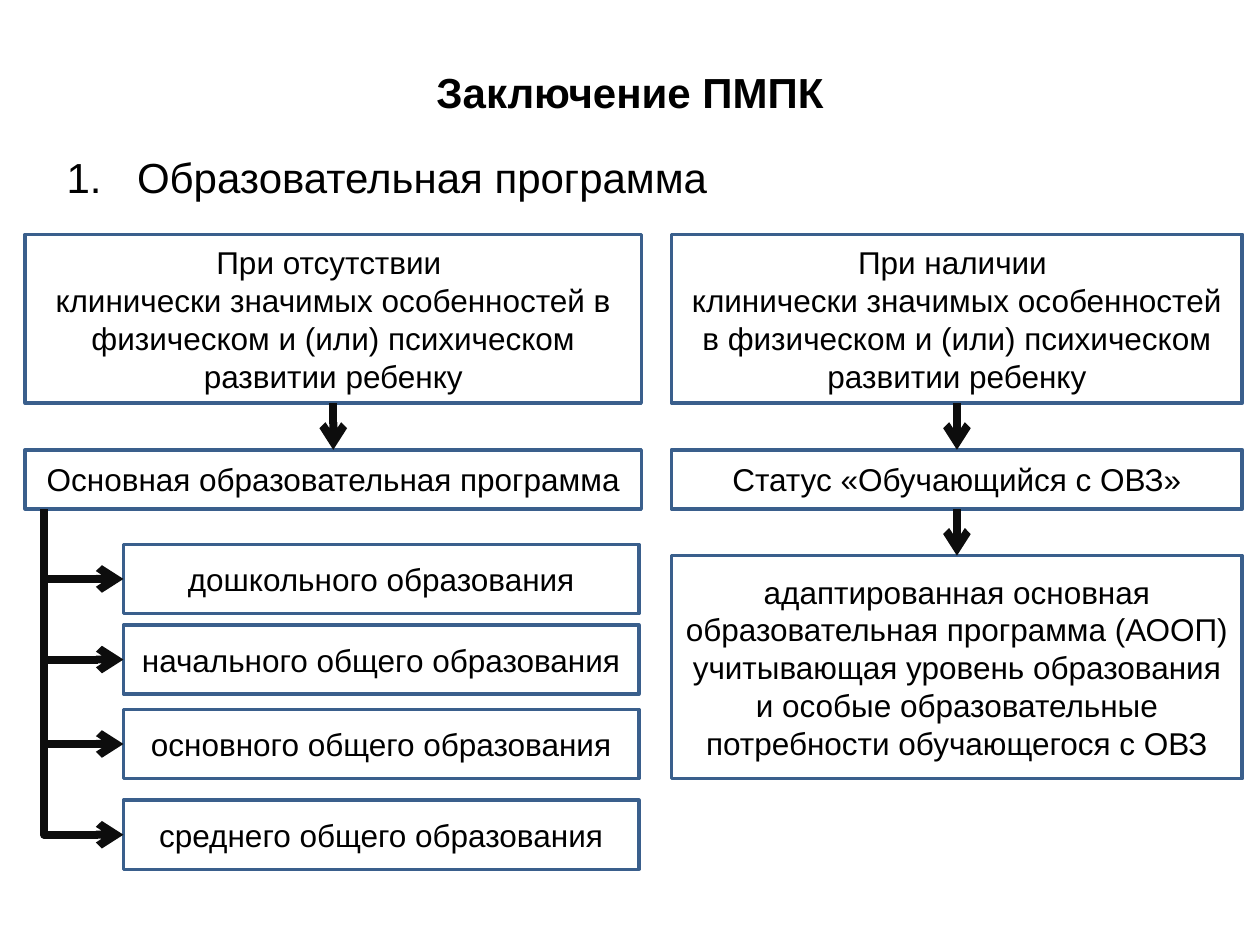
from lxml.etree import SubElement
from pptx import Presentation
from pptx.dml.color import RGBColor
from pptx.enum.shapes import MSO_CONNECTOR, MSO_SHAPE
from pptx.enum.text import MSO_ANCHOR, PP_ALIGN
from pptx.oxml.ns import qn
from pptx.util import Pt

PX = 9144  # EMU per px, 100 px to the inch
BLACK = RGBColor(0x00, 0x00, 0x00)
WHITE = RGBColor(0xFF, 0xFF, 0xFF)
BORDER = RGBColor(0x3A, 0x5F, 0x8C)
ARROW = RGBColor(0x0D, 0x0D, 0x0D)
TOP, LEFT, BOTTOM = 0, 1, 2

CONDITION = ("клинически значимых особенностей в физическом и (или) "
             "психическом развитии ребенку")
LEVELS = [
    (432, "дошкольного образования"),
    (496, "начального общего образования"),
    (563, "основного общего образования"),
    (635, "среднего общего образования"),
]


def emu(*lengths):
    return [round(length * PX) for length in lengths]


def write(frame, *lines, size=18, bold=False, align=PP_ALIGN.CENTER,
          anchor=MSO_ANCHOR.MIDDLE):
    frame.word_wrap = True
    frame.vertical_anchor = anchor
    for number, line in enumerate(lines):
        paragraph = frame.add_paragraph() if number else frame.paragraphs[0]
        paragraph.alignment = align
        run = paragraph.add_run()
        run.text = line
        run.font.name = "Arial"
        run.font.size = Pt(size)
        run.font.bold = bold
        run.font.color.rgb = BLACK


def number_paragraph(paragraph, indent):
    """Give the paragraph a hanging automatic number."""
    properties = paragraph._p.get_or_add_pPr()
    properties.set("marL", str(indent * PX))
    properties.set("indent", str(-indent * PX))
    paragraph.space_before = Pt(5)
    SubElement(properties, qn("a:buAutoNum"), type="arabicPeriod")


def add_box(slide, left, top, width, height, *lines):
    box = slide.shapes.add_shape(MSO_SHAPE.RECTANGLE,
                                 *emu(left, top, width, height))
    box.shadow.inherit = False
    box.fill.solid()
    box.fill.fore_color.rgb = WHITE
    box.line.color.rgb = BORDER
    box.line.width = Pt(2)
    write(box.text_frame, *lines)
    return box


def add_arrow(slide, start, end, kind=MSO_CONNECTOR.STRAIGHT):
    arrow = slide.shapes.add_connector(kind, *emu(*start, *end))
    arrow.line.color.rgb = ARROW
    arrow.line.width = Pt(4.5)
    SubElement(arrow.line._get_or_add_ln(), qn("a:tailEnd"), type="arrow")
    SubElement(arrow._element.spPr, qn("a:effectLst"))
    return arrow


def join_down(slide, upper, lower):
    arrow = add_arrow(slide, (0, 0), (0, 0))
    arrow.begin_connect(upper, BOTTOM)
    arrow.end_connect(lower, TOP)


def add_trunk(slide, x, top, end_x, end_y):
    """Draw an arrow that goes down from (x, top), then right to the end."""
    center_x, center_y = (x + end_x) / 2, (top + end_y) / 2
    half_drop, half_reach = (end_y - top) / 2, (end_x - x) / 2
    # A quarter turn of the mirrored elbow makes its first leg vertical.
    trunk = add_arrow(slide,
                      (center_x + half_drop, center_y - half_reach),
                      (center_x - half_drop, center_y + half_reach),
                      MSO_CONNECTOR.ELBOW)
    properties = trunk._element.spPr
    properties.find(qn("a:prstGeom")).set("prst", "bentConnector2")
    properties.find(qn("a:xfrm")).set("rot", "16200000")


def add_heading(slide, left, top, width):
    title = slide.shapes.add_textbox(*emu(left, top, width, 85))
    write(title.text_frame, "Заключение ПМПК", size=24, bold=True)
    topic = slide.shapes.add_textbox(*emu(left - 7, top + 85, width, 74))
    write(topic.text_frame, "Образовательная программа", size=24,
          align=PP_ALIGN.LEFT, anchor=MSO_ANCHOR.TOP)
    number_paragraph(topic.text_frame.paragraphs[0], 56)


def add_branch_head(slide, left, top, width, condition, outcome):
    """Place a condition and the outcome below it; return the outcome."""
    condition_box = add_box(slide, left, top, width, 134, condition, CONDITION)
    outcome_box = add_box(slide, left, top + 171, width, 47, outcome)
    join_down(slide, condition_box, outcome_box)
    return outcome_box


def add_main_program(slide, left, top, width):
    add_branch_head(slide, left, top, width, "При отсутствии ",
                    "Основная образовательная программа")
    trunk_x, level_left, level_height = left + 15, left + 78, 55
    for level_top, level in LEVELS:
        box = add_box(slide, level_left, level_top, width - 80,
                      level_height, level)
        middle = level_top + level_height / 2
        if level_top == LEVELS[-1][0]:
            add_trunk(slide, trunk_x, top + 218, level_left, middle)
        else:
            arrow = add_arrow(slide, (trunk_x, middle), (level_left, middle))
            arrow.end_connect(box, LEFT)


def add_adapted_program(slide, left, top, width):
    status = add_branch_head(slide, left, top, width, "При наличии ",
                             "Статус «Обучающийся с ОВЗ»")
    program = add_box(
        slide, left, top + 255, width, 177,
        "адаптированная основная образовательная программа (АООП) "
        "учитывающая уровень образования и особые образовательные "
        "потребности обучающегося с ОВЗ")
    join_down(slide, status, program)


def main():
    presentation = Presentation()
    presentation.slide_width, presentation.slide_height = emu(1000, 750)
    slide = presentation.slides.add_slide(presentation.slide_layouts[6])
    add_heading(slide, 50, 30, 900)
    add_main_program(slide, 20, 186, 489)
    add_adapted_program(slide, 533, 186, 453)
    presentation.save("out.pptx")


if __name__ == "__main__":
    main()
